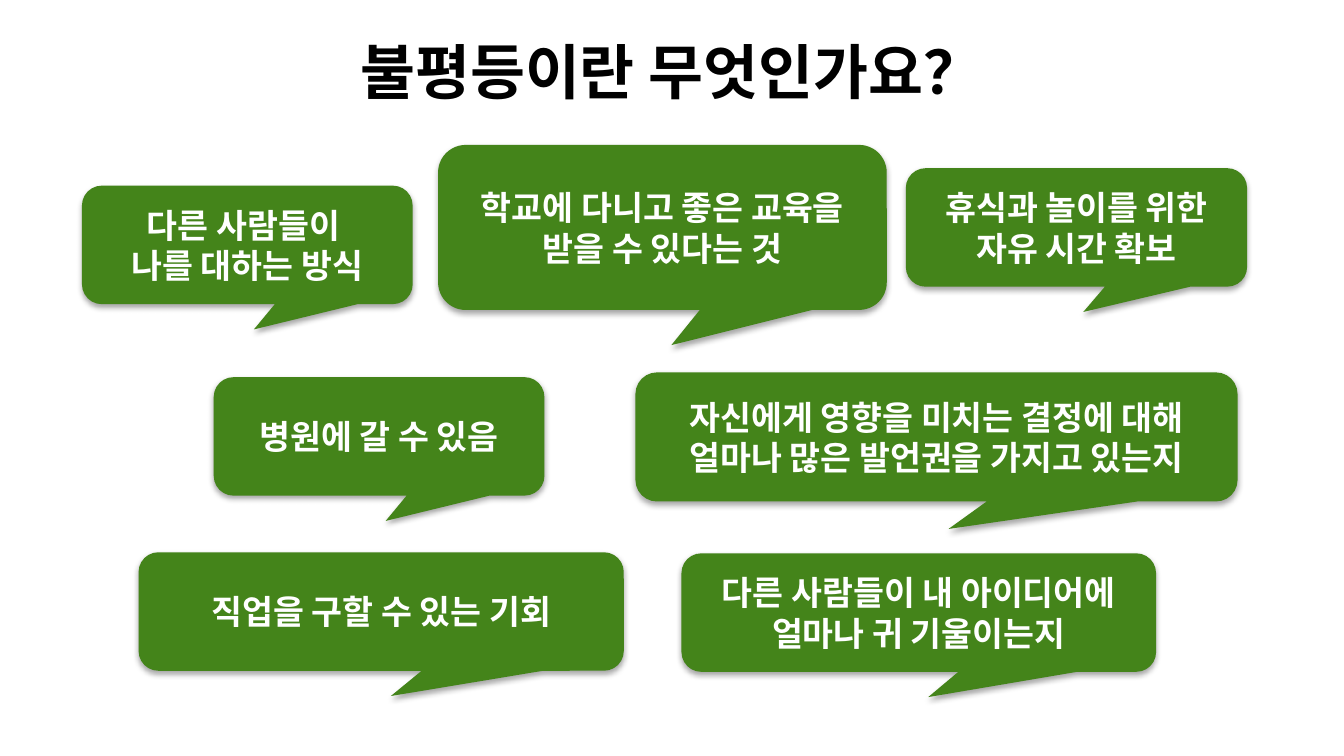
from lxml.etree import SubElement
from pptx import Presentation
from pptx.dml.color import RGBColor as Rgb
from pptx.enum.shapes import MSO_SHAPE as Preset
from pptx.enum.text import MSO_ANCHOR as Anchor, PP_ALIGN as Align
from pptx.oxml.ns import qn
from pptx.util import Cm, Pt

COLORS = {"background": "FFFFFF", "title": "000000", "bubble": "44841A",
          "bubble_text": "FFFFFF", "shadow": "000000"}
FONT = "Noto Sans CJK KR"
POINTER = (0.02, 0.713, 0.167)  # tip x, tip y, corner radius


class SlideBuilder:
    """Holds the style and the current slide."""

    def __init__(self, presentation):
        self.slide = presentation.slides.add_slide(presentation.slide_layouts[6])
        background = self.slide.background.fill
        background.solid()
        background.fore_color.rgb = Rgb.from_string(COLORS["background"])

    def add_lines(self, shape, lines, size, color, anchor):
        frame = shape.text_frame
        for name, value in {"word_wrap": True, "vertical_anchor": anchor}.items():
            setattr(frame, name, value)
        for index, line in enumerate(lines):
            paragraph = frame.add_paragraph() if index else frame.paragraphs[0]
            paragraph.alignment = Align.CENTER
            run = paragraph.add_run()
            run.text = line
            for name, value in {"name": FONT, "size": Pt(size), "bold": True}.items():
                setattr(run.font, name, value)
            run.font.color.rgb = Rgb.from_string(COLORS[color])
            # Korean letters take the East Asian typeface
            properties = run._r.get_or_add_rPr()
            SubElement(properties, qn("a:ea"), typeface=FONT)

    def title(self, text, left, top, width, height):
        box = self.slide.shapes.add_textbox(Cm(left), Cm(top), Cm(width), Cm(height))
        self.add_lines(box, [text], 32, "title", Anchor.TOP)

    def bubble(self, lines, left, top, width, height=2.24):
        shape = self.slide.shapes.add_shape(
            Preset.ROUNDED_RECTANGULAR_CALLOUT,
            Cm(left), Cm(top), Cm(width), Cm(height))
        for index, value in enumerate(POINTER):
            shape.adjustments[index] = value
        shape.fill.solid()
        shape.fill.fore_color.rgb = Rgb.from_string(COLORS["bubble"])
        shape.line.fill.background()
        self.drop_shadow(shape)
        self.add_lines(shape, lines, 18, "bubble_text", Anchor.MIDDLE)

    def drop_shadow(self, shape):
        shape.shadow.inherit = False
        effects = shape._element.spPr.find(qn("a:effectLst"))
        shadow = SubElement(effects, qn("a:outerShdw"), blurRad=str(Pt(3.1)),
                            dist=str(Pt(1.8)), dir="5400000", rotWithShape="0")
        color = SubElement(shadow, qn("a:srgbClr"), val=COLORS["shadow"])
        SubElement(color, qn("a:alpha"), val="35000")


# Text lines, then left, top, width and, if not the usual one, height in cm
BUBBLES = [
    (["병원에 갈 수 있음"], 4.04, 7.13, 6.25),
    (["학교에 다니고 좋은 교육을 받을 수 있다는 것"], 8.28, 2.74, 8.48, 3.12),
    (["다른 사람들이 ", "나를 대하는 방식"], 1.55, 3.51, 6.25),
    (["다른 사람들이 내 아이디어에 얼마나 귀 기울이는지"], 12.88, 10.46, 8.97),
    (["자신에게 영향을 미치는 결정에 대해 얼마나 많은 발언권을 가지고 있는지"],
     12.01, 7.04, 11.38, 2.44),
    (["직업을 구할 수 있는 기회"], 2.62, 10.44, 9.17),
    (["휴식과 놀이를 위한 자유 시간 확보"], 17.12, 3.18, 6.45),
]


def main():
    presentation = Presentation()
    presentation.slide_width, presentation.slide_height = Cm(25.4), Cm(14.29)
    builder = SlideBuilder(presentation)

    # Heading
    builder.title("불평등이란 무엇인가요？", 5.13, 0.53, 15.14, 2.01)

    # Speech bubbles
    for bubble in BUBBLES:
        builder.bubble(*bubble)

    presentation.save("out.pptx")


if __name__ == "__main__":
    main()
